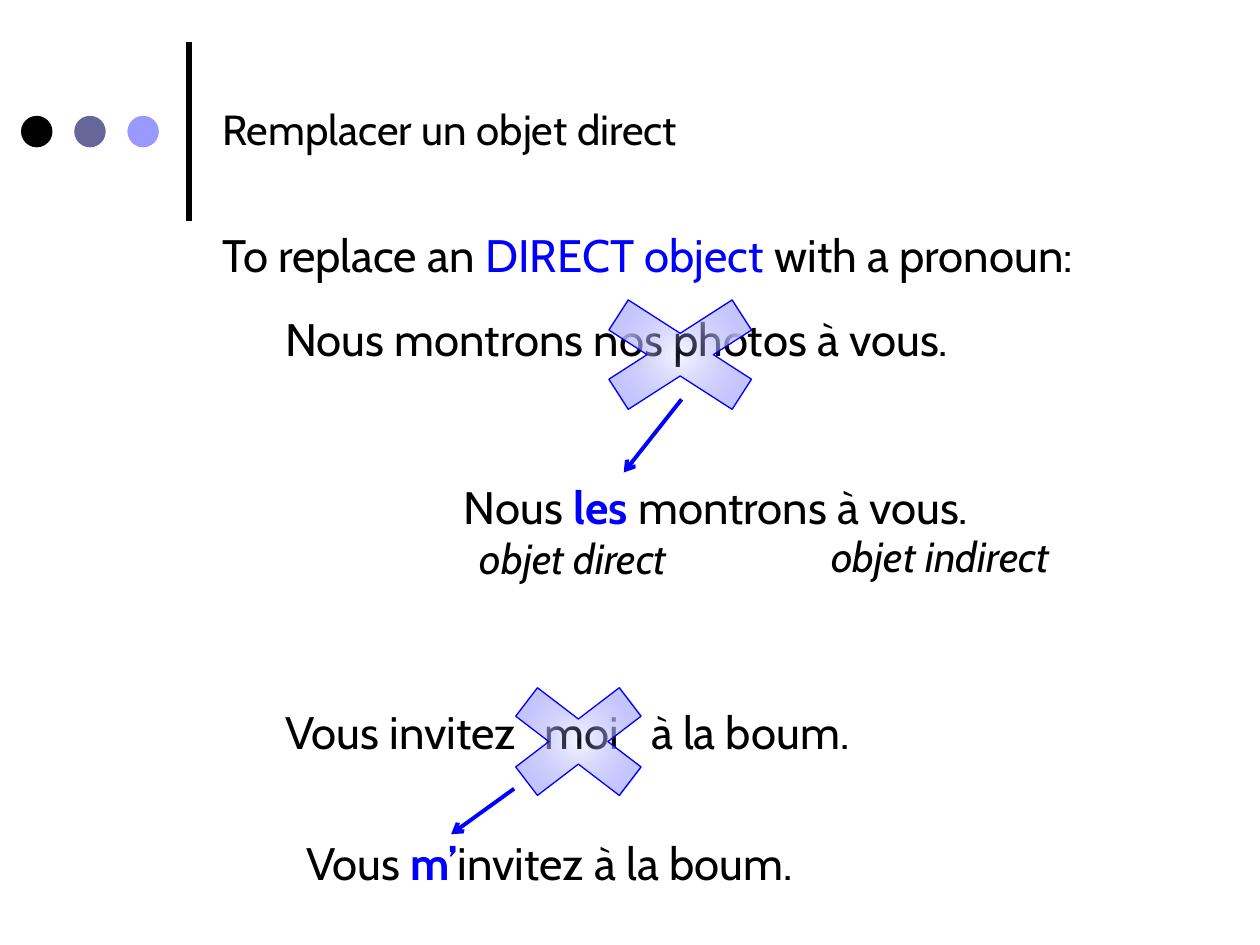
from lxml import etree
from pptx import Presentation
from pptx.dml.color import RGBColor
from pptx.enum.shapes import MSO_CONNECTOR, MSO_SHAPE
from pptx.enum.text import MSO_AUTO_SIZE
from pptx.oxml import parse_xml
from pptx.oxml.ns import nsdecls, qn
from pptx.util import Pt

COLORS = {
    "black": "000000", "slate": "666699", "lavender": "9999FF", "blue": "0000FF",
    "cross_center": "A0A0FF", "cross_middle": "C5C5FF", "cross_edge": "E3E3FF",
}
FONT = "Cabin"


def rgb(name):
    return RGBColor.from_string(COLORS[name])


def add_text(slide, box, runs, size=26, italic=False, tabs=()):
    """Runs are plain strings or (text, colour, bold) tuples."""
    frame = slide.shapes.add_textbox(*map(Pt, box)).text_frame
    frame.word_wrap = True
    frame.auto_size = MSO_AUTO_SIZE.SHAPE_TO_FIT_TEXT
    paragraph = frame.paragraphs[0]
    paragraph.font.name = FONT
    paragraph.font.size = Pt(size)
    paragraph.font.italic = italic
    for item in runs:
        text, color, bold = (item, "black", False) if isinstance(item, str) else item
        run = paragraph.add_run()
        run.text = text
        run.font.color.rgb = rgb(color)
        run.font.bold = bold
    if tabs:
        tab_list = etree.Element(qn("a:tabLst"))
        for position in tabs:
            etree.SubElement(tab_list, qn("a:tab"), pos=str(Pt(position)), algn="l")
        paragraph._p.get_or_add_pPr().insert(0, tab_list)


def add_line(slide, start, end, color, width, arrow=False):
    line = slide.shapes.add_connector(MSO_CONNECTOR.STRAIGHT, *map(Pt, start + end))
    line.line.color.rgb = rgb(color)
    line.line.width = Pt(width)
    if arrow:
        etree.SubElement(line.line._get_or_add_ln(), qn("a:tailEnd"), type="arrow")
    etree.SubElement(line._element.spPr, qn("a:effectLst"))


def add_cross(slide, box):
    cross = slide.shapes.add_shape(MSO_SHAPE.MATH_MULTIPLY, *map(Pt, box))
    cross.shadow.inherit = False
    cross.line.color.rgb = rgb("blue")
    cross.line.width = Pt(0.75)
    # Radial gradient, nearly clear in the centre
    gradient = parse_xml(
        f'<a:gradFill {nsdecls("a")} rotWithShape="1"><a:gsLst>'
        f'<a:gs pos="0"><a:srgbClr val="{COLORS["cross_center"]}">'
        '<a:alpha val="8000"/></a:srgbClr></a:gs>'
        f'<a:gs pos="50000"><a:srgbClr val="{COLORS["cross_middle"]}"/></a:gs>'
        f'<a:gs pos="100000"><a:srgbClr val="{COLORS["cross_edge"]}"/></a:gs>'
        '</a:gsLst><a:path path="circle">'
        '<a:fillToRect l="50000" t="50000" r="50000" b="50000"/>'
        '</a:path></a:gradFill>')
    cross._element.spPr.find(qn("a:prstGeom")).addnext(gradient)


def add_header(slide, left, top):
    # Rule and row of dots
    add_line(slide, (left + 96, top + 102), (left + 96, top), "black", 3)
    for index, color in enumerate(("black", "slate", "lavender")):
        dot = slide.shapes.add_shape(
            MSO_SHAPE.OVAL, Pt(left + 30.4 * index), Pt(top + 42.2), Pt(18), Pt(18))
        dot.shadow.inherit = False
        dot.fill.solid()
        dot.fill.fore_color.rgb = rgb(color)
        dot.line.fill.background()
    add_text(slide, (left + 108, top + 31.4, 540, 36.6),
             ["Remplacer un objet direct"], size=24)


def add_photos_example(slide, left, top):
    add_text(slide, (left + 36, top + 48.2, 468, 39),
             ["Nous montrons nos photos à vous."])
    add_text(slide, (left, top, 576, 39),
             ["To replace an ", ("DIRECT object ", "blue", False), "with a pronoun:"])
    add_text(slide, (left + 138, top + 144, 378, 39),
             ["Nous ", ("les ", "blue", True), "montrons à vous."])
    add_line(slide, (left + 269.5, top + 102.2), (left + 236.4, top + 144), "blue", 2.25, True)
    # Labels under the answer
    add_text(slide, (left + 147, top + 175, 156, 36), ["objet direct"], 24, True)
    add_text(slide, (left + 348, top + 173.5, 156, 36), ["objet indirect"], 24, True)
    add_cross(slide, (left + 201, top + 33.1, 135.4, 87.1))


def add_boum_example(slide, left, top):
    add_text(slide, (left, top, 468, 39),
             ["Vous invitez\tmoi\tà la boum."], tabs=(148.2, 209))
    add_cross(slide, (left + 117.6, top - 18.7, 113.8, 87.1))
    add_text(slide, (left + 11.8, top + 74.9, 378, 39),
             ["Vous ", ("m’", "blue", True), "invitez à la boum."])
    add_line(slide, (left + 137.8, top + 51.8), (left + 101.8, top + 77.8), "blue", 2.25, True)


def main():
    presentation = Presentation()
    presentation.slide_width, presentation.slide_height = Pt(720), Pt(540)
    slide = presentation.slides.add_slide(presentation.slide_layouts[6])
    add_header(slide, 12, 24)
    add_photos_example(slide, 120, 126)
    add_boum_example(slide, 156, 398.9)
    presentation.save("out.pptx")


if __name__ == "__main__":
    main()
